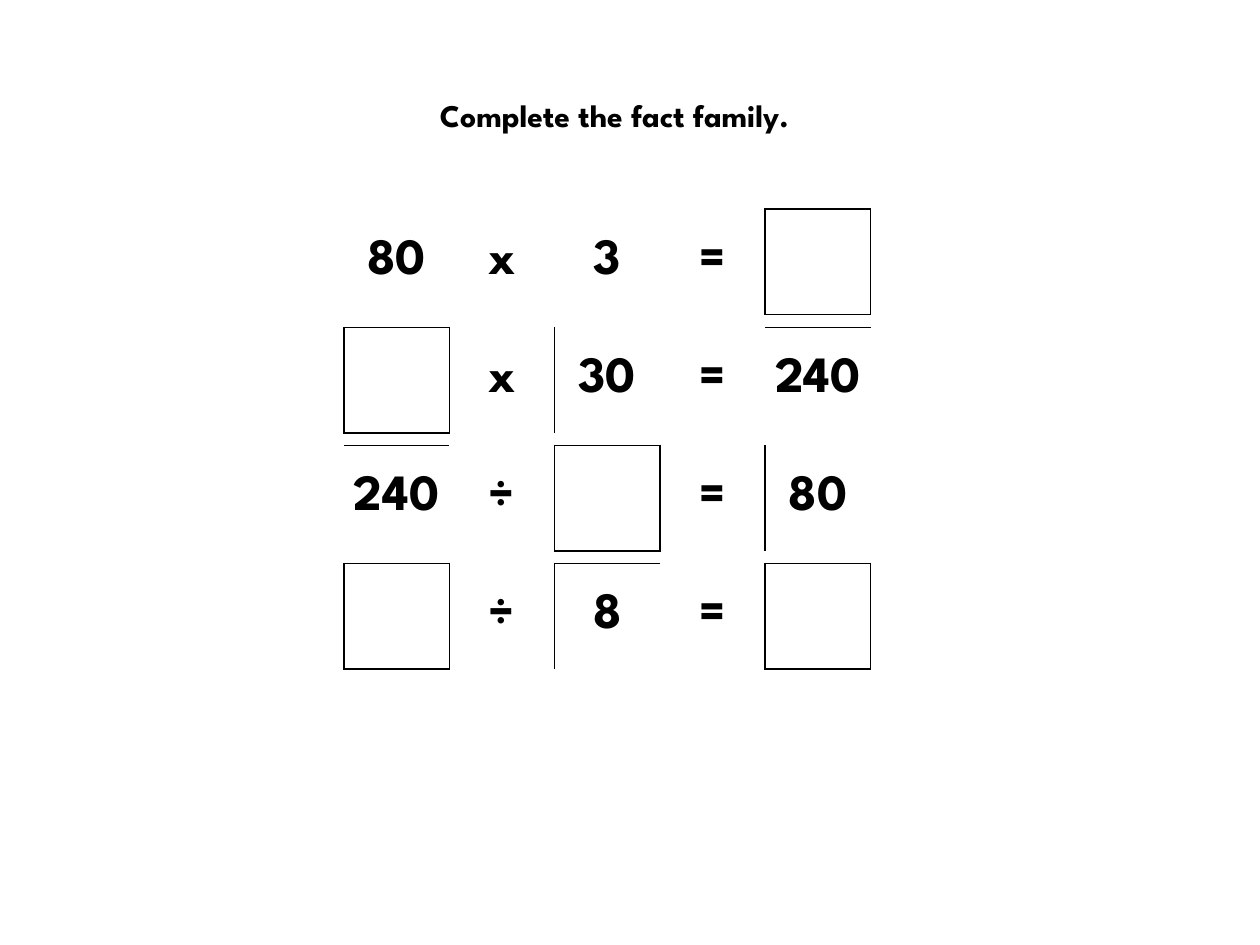
import pptx
import pptx.dml.color
import pptx.enum.text
import pptx.oxml
import pptx.oxml.ns
import pptx.util
from pptx.util import Inches

BLACK = pptx.dml.color.RGBColor(0, 0, 0)
WHITE = pptx.dml.color.RGBColor(255, 255, 255)
FONT = "League Spartan"
NO_STYLE = "{2D5ABB26-0587-4C30-8999-92F81FD0307C}"
BOX = ""  # an answer box for the pupil to fill in
FACTS = [
    ["80", "x", "3", "=", BOX],
    [BOX, "x", "30", "=", "240"],
    ["240", "÷", BOX, "=", "80"],
    [BOX, "÷", "8", "=", BOX],
]
GAP = Inches(0.1)
# Border tag: row step and column step to the neighbour, the neighbour's border tag
SIDES = {
    "a:lnL": (0, -1, "a:lnR"),
    "a:lnR": (0, 1, "a:lnL"),
    "a:lnT": (-1, 0, "a:lnB"),
    "a:lnB": (1, 0, "a:lnT"),
}


def style_text(para, size):
    para.alignment = pptx.enum.text.PP_ALIGN.CENTER
    for span in para.runs:
        span.font.name = FONT
        span.font.size = pptx.util.Pt(size)
        span.font.bold = True
        span.font.color.rgb = BLACK


def add_title(page, left, top, width, height, text):
    title = page.shapes.title
    title.left, title.top, title.width, title.height = left, top, width, height
    frame = title.text_frame
    frame.text = text
    frame.word_wrap = False
    frame.auto_size = pptx.enum.text.MSO_AUTO_SIZE.SHAPE_TO_FIT_TEXT
    frame.vertical_anchor = pptx.enum.text.MSO_ANCHOR.TOP
    style_text(frame.paragraphs[0], 18)


def add_border(cell, tag):
    namespace = pptx.oxml.ns.nsdecls("a")
    line = pptx.oxml.parse_xml(
        f'<{tag} {namespace} w="12700"><a:solidFill><a:srgbClr val="{BLACK}"/>'
        f"</a:solidFill></{tag}>"
    )
    cell._tc.get_or_add_tcPr().append(line)


def fill_cell(cell, text):
    cell.margin_left = cell.margin_right = cell.margin_top = cell.margin_bottom = 0
    cell.vertical_anchor = pptx.enum.text.MSO_ANCHOR.MIDDLE
    para = cell.text_frame.paragraphs[0]
    if text:
        para.text = text
        style_text(para, 29)
    else:
        # A tiny empty line keeps the spacer rows thin
        end = para._p.get_or_add_endParaRPr()
        end.set("sz", "100")


def add_facts(page, left, top, width, height):
    row_count, column_count = 2 * len(FACTS) - 1, len(FACTS[0])
    frame = page.shapes.add_table(row_count, column_count, left, top, width, height)
    table = frame.table
    table.first_row = table.horz_banding = False
    table._tbl.tblPr.find(pptx.oxml.ns.qn("a:tableStyleId")).text = NO_STYLE

    # Square fact rows with thin spacer rows between them
    fact_height = (height - GAP * (len(FACTS) - 1)) // len(FACTS)
    for index, row in enumerate(table.rows):
        row.height = GAP if index % 2 else fact_height
    for column in table.columns:
        column.width = width // column_count

    boxes = {
        (2 * row, column)
        for row, fact in enumerate(FACTS)
        for column, text in enumerate(fact)
        if text == BOX
    }
    for row in range(row_count):
        for column in range(column_count):
            cell = table.cell(row, column)
            fill_cell(cell, "" if row % 2 else FACTS[row // 2][column])
            # Each edge of a box is drawn on both cells that share it
            for tag, (down, across, _) in SIDES.items():
                if (row, column) in boxes or (row + down, column + across) in boxes:
                    add_border(cell, tag)
            if (row, column) in boxes:
                cell.fill.solid()
                cell.fill.fore_color.rgb = WHITE
            else:
                cell.fill.background()


def main():
    deck = pptx.Presentation()
    deck.slide_width, deck.slide_height = Inches(10), Inches(7.5)
    page = deck.slides.add_slide(deck.slide_layouts[5])
    page.background.fill.solid()
    page.background.fill.fore_color.rgb = WHITE
    add_facts(page, Inches(2.73), Inches(1.66), Inches(4.18), Inches(3.65))
    add_title(page, Inches(3.22), Inches(0.71), Inches(3.38), Inches(0.4),
              "Complete the fact family. ")
    deck.save("out.pptx")


if __name__ == "__main__":
    main()
